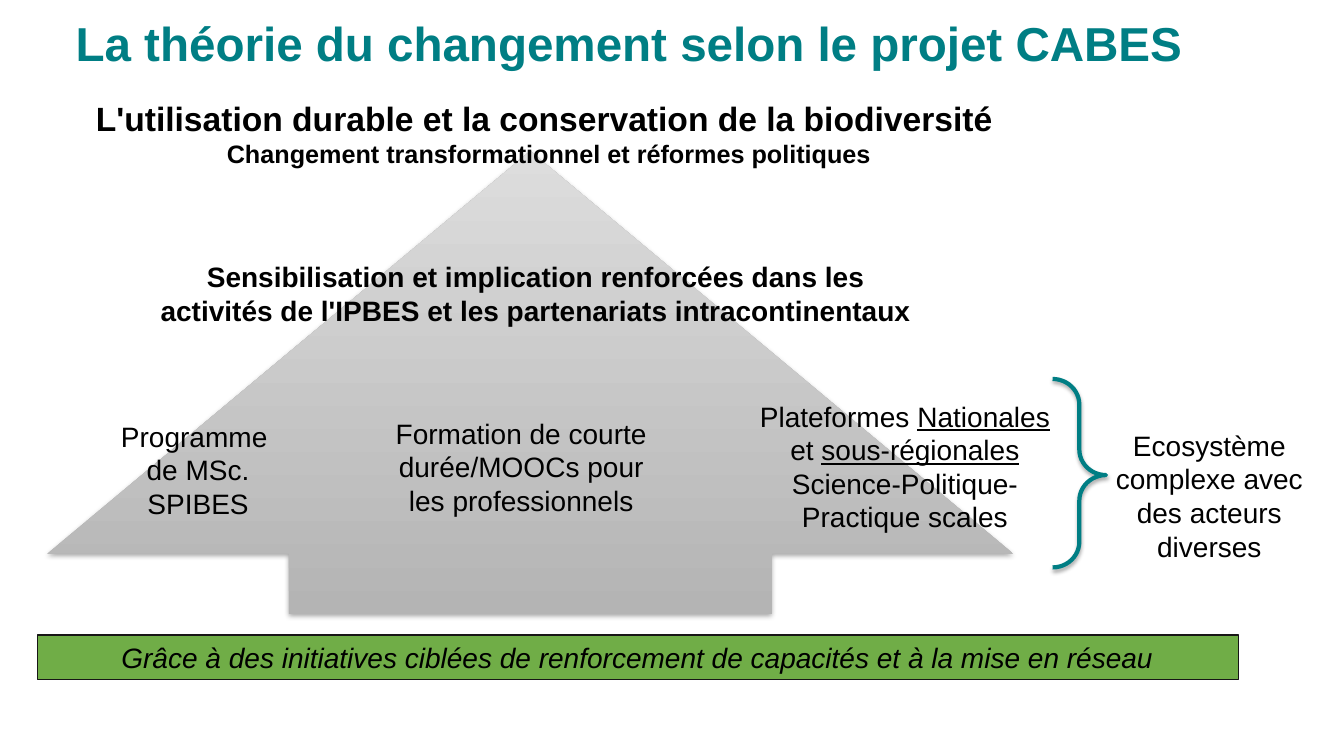
"""Build the CABES theory of change slide."""
from dataclasses import dataclass

from lxml.etree import SubElement
from pptx import Presentation
from pptx.dml.color import RGBColor
from pptx.enum.shapes import MSO_SHAPE as Shape
from pptx.enum.text import MSO_ANCHOR as Anchor, MSO_AUTO_SIZE as AutoSize, PP_ALIGN as Align
from pptx.oxml.ns import qn
from pptx.util import Emu, Pt


@dataclass(frozen=True)
class Theme:
    font: str = "Arial"
    teal: str = "007E84"
    black: str = "000000"
    green: str = "70AD47"
    outline: str = "171616"
    arrow_dark: str = "B4B4B4"
    arrow_light: str = "DDDDDD"
    title_size: int = 34
    goal_size: int = 24
    body_size: int = 20
    small_size: int = 18


THEME = Theme()
EMU_PER_PX = 9144


def px(value):
    return Emu(value * EMU_PER_PX)


def add_text(paragraph, text, size=THEME.body_size, color=THEME.black,
             bold=False, italic=False, underline=False):
    run = paragraph.add_run()
    run.text = text
    font = run.font
    font.name, font.size = THEME.font, Pt(size)
    font.bold, font.italic, font.underline = bold, italic, underline
    font.color.rgb = RGBColor.from_string(color)


class SlideBuilder:
    def __init__(self, presentation, theme):
        self.theme = theme
        self.slide = presentation.slides.add_slide(presentation.slide_layouts[5])

    def title(self, text, left, top, width, height):
        shape = self.slide.shapes.title
        shape.left, shape.top, shape.width, shape.height = map(px, (left, top, width, height))
        frame = shape.text_frame
        frame.vertical_anchor = Anchor.BOTTOM
        frame.auto_size = AutoSize.NONE
        paragraph = frame.paragraphs[0]
        paragraph.alignment, paragraph.line_spacing = Align.LEFT, 0.9
        add_text(paragraph, text, size=self.theme.title_size, color=self.theme.teal, bold=True)

    def fill_frame(self, frame, paragraphs):
        frame.word_wrap = True
        frame.auto_size = AutoSize.SHAPE_TO_FIT_TEXT
        for index, runs in enumerate(paragraphs):
            paragraph = frame.add_paragraph() if index else frame.paragraphs[0]
            paragraph.alignment = Align.CENTER
            for text, style in runs:
                add_text(paragraph, text, **style)

    def label(self, box, *paragraphs):
        shape = self.slide.shapes.add_textbox(*map(px, box))
        self.fill_frame(shape.text_frame, paragraphs)

    def preset(self, kind, box, adjustments=(), shadow=False):
        shape = self.slide.shapes.add_shape(kind, *map(px, box))
        shape.shadow.inherit = False
        for index, value in enumerate(adjustments):
            shape.adjustments[index] = value
        if shadow:
            effects = shape._element.spPr.find(qn("a:effectLst"))
            outer = SubElement(effects, qn("a:outerShdw"), blurRad=str(Pt(3.1)),
                               dist=str(Pt(1.8)), dir="5400000", rotWithShape="0")
            color = SubElement(outer, qn("a:srgbClr"), val=self.theme.black)
            SubElement(color, qn("a:alpha"), val="35000")
        return shape

    def outline(self, shape, color, width):
        shape.line.color.rgb = RGBColor.from_string(color)
        shape.line.width = Pt(width)

    def arrow(self, box):
        shape = self.preset(Shape.UP_ARROW, box, (0.5, 0.87), shadow=True)
        shape.line.fill.background()
        shape.fill.gradient()
        shape.fill.gradient_angle = 90
        colors = (self.theme.arrow_dark, self.theme.arrow_light)
        for stop, position, color in zip(shape.fill.gradient_stops, (0, 1), colors):
            stop.position = position
            stop.color.rgb = RGBColor.from_string(color)

    def brace(self, box):
        shape = self.preset(Shape.RIGHT_BRACE, box, (0.48, 0.51), shadow=True)
        shape.fill.background()
        self.outline(shape, self.theme.teal, 3)

    def banner(self, text, box):
        shape = self.preset(Shape.RECTANGLE, box)
        shape.fill.solid()
        shape.fill.fore_color.rgb = RGBColor.from_string(self.theme.green)
        self.outline(shape, self.theme.outline, 0.75)
        self.fill_frame(shape.text_frame, [[(text, {"italic": True})]])


def main():
    presentation = Presentation()
    presentation.slide_width, presentation.slide_height = px(1333), px(750)
    builder = SlideBuilder(presentation, THEME)
    plain, bold, underlined = {}, {"bold": True}, {"underline": True}

    builder.arrow((47, 150, 958, 459))
    builder.title("La théorie du changement selon le projet CABES", 65, -8, 1144, 84)
    builder.banner("Grâce à des initiatives ciblées de renforcement de capacités et à la mise en réseau",
                   (37, 630, 1191, 44))
    builder.label((93, 411, 207, 111), [("Programme ", plain)], [("de MSc. SPIBES", plain)])
    builder.label((380, 408, 274, 111),
                  [("Formation de courte durée/MOOCs pour les professionnels", plain)])
    builder.label((734, 391, 327, 145),
                  [("Plateformes ", plain), ("Nationales", underlined), (" et ", plain),
                   ("sous-régionales", underlined),
                   (" Science-Politique-Practique scales", plain)])
    builder.brace((1044, 376, 53, 187))
    builder.label((1093, 420, 213, 145),
                  [("Ecosystème complexe avec des acteurs diverses", plain)])
    builder.label((143, 253, 777, 77),
                  [("Sensibilisation et implication renforcées dans les activités de l'IPBES "
                    "et les partenariats intracontinentaux", bold)])
    builder.label((28, 92, 1033, 81),
                  [("L'utilisation durable et la conservation de la biodiversité ",
                    {"size": THEME.goal_size, **bold})],
                  [("Changement transformationnel et réformes politiques",
                    {"size": THEME.small_size, **bold})])
    presentation.save("out.pptx")


if __name__ == "__main__":
    main()
